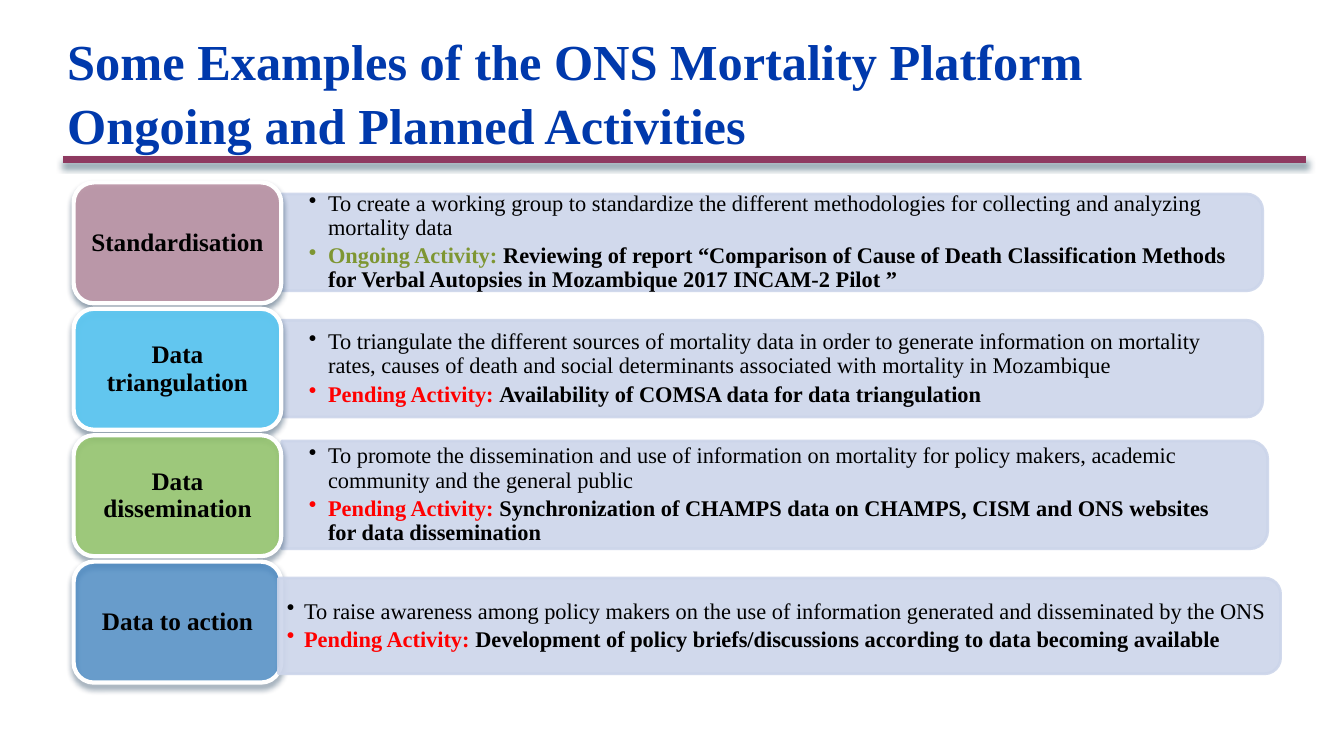
from lxml import etree
from pptx import Presentation
from pptx.dml.color import RGBColor
from pptx.enum.shapes import MSO_CONNECTOR, MSO_SHAPE
from pptx.enum.text import MSO_ANCHOR, PP_ALIGN
from pptx.oxml.ns import qn
from pptx.util import Pt

STRAIGHT = MSO_CONNECTOR.STRAIGHT
CARD_SHAPE = MSO_SHAPE.ROUNDED_RECTANGLE
BAND_SHAPE = MSO_SHAPE.ROUND_2_SAME_RECTANGLE
MIDDLE = MSO_ANCHOR.MIDDLE
LEFT, CENTER = PP_ALIGN.LEFT, PP_ALIGN.CENTER

FONT = "Times New Roman"
COLORS = {
    "title": "0039AC", "rule": "8E3A60", "rule_shadow": "003148",
    "band": "CCD5EA", "card_shadow": "042747", "white": "FFFFFF",
    "text": "000000", "ongoing": "7E9632", "pending": "FF0000",
    "mauve": "BF97A8", "sky": "4FCEFF", "green": "92D050", "blue": "0F6FC6",
}
CARD_LEFT, CARD_TOP, CARD_PITCH = 52.6, 130.3, 90.3
CARD_WIDTH, CARD_HEIGHT = 148.3, 86.4
WIDE_INSETS, NARROW_INSETS = (19.4, 10, 19.4, 10), (6, 3, 6, 3)

ACTIVITIES = [
    {"label": "Standardisation", "color": "mauve", "alpha": 90,
     "band": (201.3, 138.6, 700.6, 69.1),
     "goal": "To create a working group to standardize the different methodologies "
             "for collecting and analyzing mortality data",
     "status": "ongoing",
     "step": "Reviewing of report “Comparison of Cause of Death Classification Methods "
             "for Verbal Autopsies in Mozambique 2017 INCAM-2 Pilot ”"},
    {"label": "Data triangulation", "color": "sky", "alpha": 77,
     "band": (201.3, 228.8, 700.6, 69.1),
     "goal": "To triangulate the different sources of mortality data in order to generate "
             "information on mortality rates, causes of death and social determinants "
             "associated with mortality in Mozambique",
     "status": "pending",
     "step": "Availability of COMSA data for data triangulation"},
    {"label": "Data dissemination", "color": "green", "alpha": 63,
     "band": (201.3, 315, 704.2, 77),
     "goal": "To promote the dissemination and use of information on mortality for policy "
             "makers, academic community and the general public",
     "status": "pending",
     "step": "Synchronization of CHAMPS data on CHAMPS, CISM and ONS websites "
             "for data dissemination"},
    {"label": "Data to action", "color": "blue", "alpha": 50,
     "band": (199, 412.9, 715.7, 68.4), "in_front": True,
     "goal": "To raise awareness among policy makers on the use of information generated "
             "and disseminated by the ONS",
     "status": "pending",
     "step": "Development of policy briefs/discussions according to data becoming available"},
]


def rgb(name):
    return RGBColor.from_string(COLORS[name])


def set_alpha(color_parent, percent):
    for color in color_parent.iter(qn("a:srgbClr")):
        etree.SubElement(color, qn("a:alpha"), val=str(percent * 1000))


def add_shadow(element, color):
    effects = etree.SubElement(element.spPr, qn("a:effectLst"))
    shadow = etree.SubElement(
        effects, qn("a:outerShdw"), blurRad=str(Pt(4.5)), dist=str(Pt(3)),
        dir="5400000", algn="ctr", rotWithShape="0")
    etree.SubElement(shadow, qn("a:srgbClr"), val=COLORS[color])
    set_alpha(shadow, 48)


def add_panel(slide, kind, box, fill, alpha, line, line_width):
    panel = slide.shapes.add_shape(kind, *map(Pt, box))
    panel.fill.solid()
    panel.fill.fore_color.rgb = rgb(fill)
    set_alpha(panel._element.spPr, alpha)
    panel.line.color.rgb = rgb(line)
    panel.line.width = Pt(line_width)
    return panel


def add_text(slide, paragraphs, box, size, insets, align=LEFT, spacing=0.9,
             after=0, indent=0):
    frame = slide.shapes.add_textbox(*map(Pt, box)).text_frame
    frame.word_wrap = True
    frame.vertical_anchor = MIDDLE
    (frame.margin_left, frame.margin_top,
     frame.margin_right, frame.margin_bottom) = map(Pt, insets)
    for index, runs in enumerate(paragraphs):
        paragraph = frame.paragraphs[0] if index == 0 else frame.add_paragraph()
        if indent:
            properties = paragraph._p.get_or_add_pPr()
            properties.set("marL", str(Pt(indent)))
            properties.set("indent", str(-Pt(indent)))
            etree.SubElement(properties, qn("a:buChar"), char="•")
        paragraph.alignment = align
        paragraph.line_spacing = spacing
        paragraph.space_after = Pt(after)
        for words, color, bold in runs:
            run = paragraph.add_run()
            run.text = words
            run.font.name = FONT
            run.font.size = Pt(size)
            run.font.bold = bold
            run.font.color.rgb = rgb(color)


def add_title(slide, title):
    rule = slide.shapes.add_connector(STRAIGHT, Pt(45), Pt(114), Pt(933), Pt(114))
    rule.line.color.rgb = rgb("rule")
    rule.line.width = Pt(4.5)
    add_shadow(rule._element, "rule_shadow")
    add_text(slide, [[(title, "title", True)]], (48, 18, 864, 90), 36,
             (0, 3.6, 0, 0), spacing=1.05)


def add_card(slide, activity, top):
    card = add_panel(slide, CARD_SHAPE, (CARD_LEFT, top, CARD_WIDTH, CARD_HEIGHT),
                     activity["color"], activity["alpha"], "white", 3)
    add_shadow(card._element, "card_shadow")
    add_text(slide, [[(activity["label"], "text", True)]],
             (CARD_LEFT + 4, top + 4, CARD_WIDTH - 8, CARD_HEIGHT - 8), 18,
             (5, 3, 5, 3), align=CENTER)


def add_band(slide, activity):
    left, top, width, height = activity["band"]
    upright = (left + (width - height) / 2, top + (height - width) / 2, height, width)
    band = add_panel(slide, BAND_SHAPE, upright, "band", 90, "band", 2)
    band.rotation = 90
    band.shadow.inherit = False
    set_alpha(band.line._ln, 90)
    in_front = activity.get("in_front")
    status = activity["status"]
    add_text(slide,
             [[(activity["goal"], "text", False)],
              [(f"{status.title()} Activity: ", status, True),
               (activity["step"], "text", True)]],
             (left, top + 3.5, width - 4, height - 7), 16,
             NARROW_INSETS if in_front else WIDE_INSETS,
             after=2.8, indent=12.2 if in_front else 13.7)


def main():
    deck = Presentation()
    deck.slide_width, deck.slide_height = Pt(960), Pt(540)
    slide = deck.slides.add_slide(deck.slide_layouts[6])
    add_title(slide, "Some Examples of the ONS Mortality Platform "
                     "Ongoing and Planned Activities")
    for row, activity in enumerate(ACTIVITIES):
        top = CARD_TOP + row * CARD_PITCH
        if activity.get("in_front"):
            add_card(slide, activity, top)
            add_band(slide, activity)
        else:
            add_band(slide, activity)
            add_card(slide, activity, top)
    deck.save("out.pptx")


if __name__ == "__main__":
    main()
